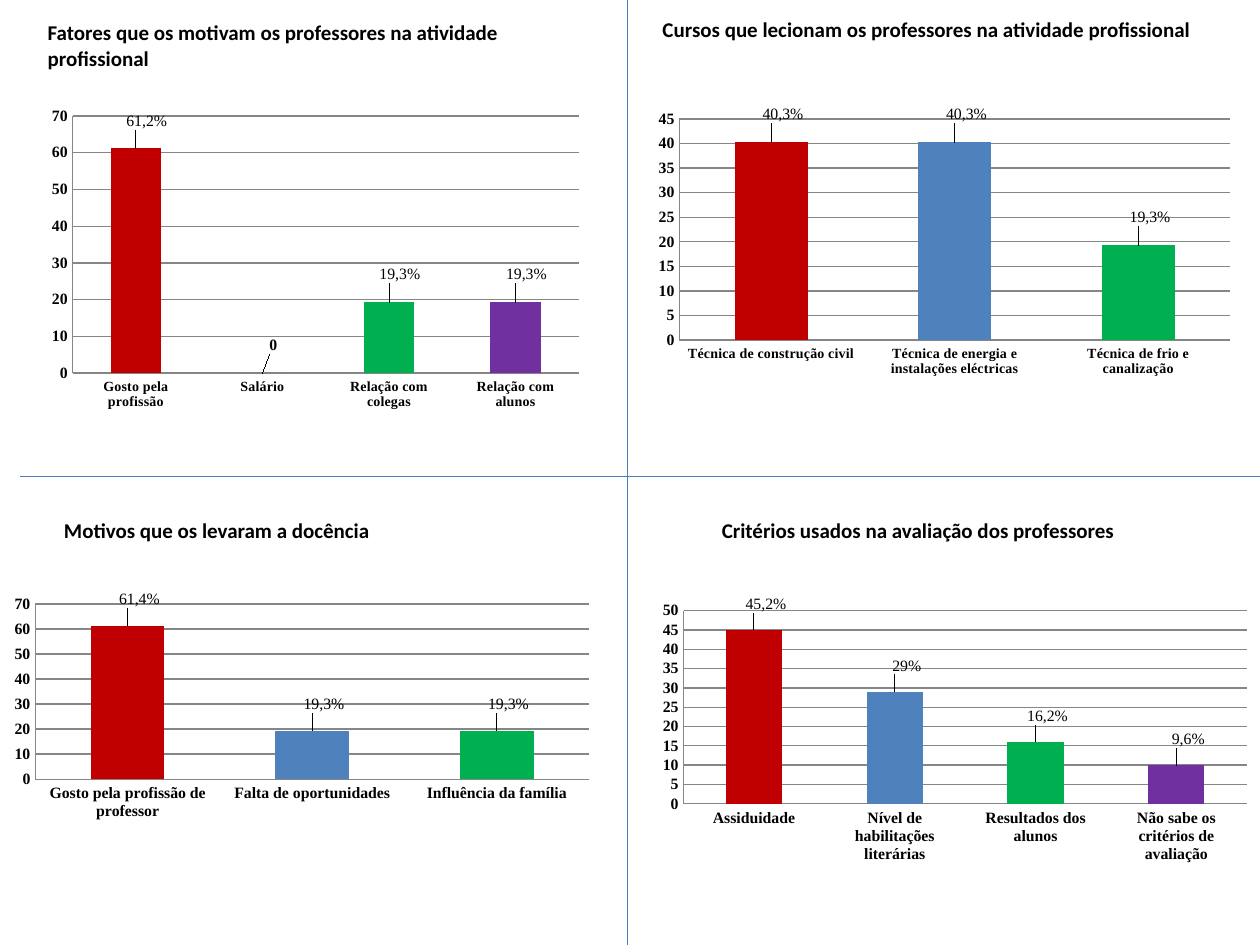
from dataclasses import dataclass

from lxml.etree import SubElement
from pptx import Presentation
from pptx.chart.data import CategoryChartData
from pptx.dml.color import RGBColor
from pptx.enum.chart import XL_CHART_TYPE, XL_LABEL_POSITION, XL_TICK_MARK
from pptx.enum.shapes import MSO_CONNECTOR
from pptx.enum.text import MSO_AUTO_SIZE
from pptx.oxml import parse_xml
from pptx.oxml.ns import nsdecls, qn
from pptx.util import Inches, Pt


@dataclass(frozen=True)
class Theme:
    text: RGBColor = RGBColor.from_string("000000")
    divider: RGBColor = RGBColor.from_string("4B7EBC")
    grid: RGBColor = RGBColor.from_string("868686")
    bars: tuple = tuple(
        RGBColor.from_string(code) for code in ("C00000", "4F81BD", "00B050", "7030A0")
    )
    title_font: str = "Calibri"
    chart_font: str = "Times New Roman"
    title_size: Pt = Pt(12)
    chart_size: Pt = Pt(9)
    small_size: Pt = Pt(8)
    line_width: Pt = Pt(0.75)


@dataclass(frozen=True)
class Panel:
    title: str
    title_box: tuple
    wraps: bool
    chart_box: tuple
    plot_area: tuple
    categories: tuple
    values: tuple
    labels: tuple
    category_size: Pt


THEME = Theme()
LABEL_SHIFT = (0.02, -0.04)

PANELS = (
    Panel(
        "Fatores que os motivam os professores na atividade profissional",
        (0.28, 0.11, 4.33, 0.5), True,
        (0.32, 0.63, 4.28, 2.65), (0.06, 0.11, 0.94, 0.77),
        ("Gosto pela profissão", "Salário", "Relação com colegas", "Relação com alunos"),
        (61.2, 0, 19.3, 19.3), ("61,2%", None, "19,3%", "19,3%"), THEME.small_size,
    ),
    Panel(
        "Cursos que lecionam os professores na atividade profissional",
        (5.16, 0.08, 5, 0.3), True,
        (5.16, 0.6, 4.65, 2.76), (0.05, 0.125, 0.94, 0.636),
        ("Técnica de construção civil", "Técnica de energia e instalações eléctricas",
         "Técnica de frio e canalização"),
        (40.3, 40.3, 19.3), ("40,3%", "40,3%", "19,3%"), THEME.small_size,
    ),
    Panel(
        "Motivos que os levaram a docência",
        (0.41, 4.06, 2.66, 0.3), False,
        (0, 4.38, 4.68, 2.44), (0.06, 0.17, 0.94, 0.57),
        ("Gosto pela profissão de professor", "Falta de oportunidades",
         "Influência da família"),
        (61.4, 19.3, 19.3), ("61,4%", "19,3%", "19,3%"), THEME.chart_size,
    ),
    Panel(
        "Critérios usados na avaliação dos professores",
        (5.63, 4.06, 3.35, 0.3), False,
        (5.14, 4.54, 4.76, 2.36), (0.06, 0.13, 0.94, 0.65),
        ("Assiduidade", "Nível de habilitações literárias", "Resultados dos alunos",
         "Não sabe os critérios de avaliação"),
        (45, 29, 16, 10), ("45,2%", "29%", "16,2%", "9,6%"), THEME.chart_size,
    ),
)


def style_font(font, name, size, bold):
    font.name = name
    font.size = size
    font.bold = bold
    font.color.rgb = THEME.text


def add_title(page, panel):
    box = page.shapes.add_textbox(*map(Inches, panel.title_box))
    frame = box.text_frame
    frame.word_wrap = panel.wraps
    frame.auto_size = MSO_AUTO_SIZE.SHAPE_TO_FIT_TEXT
    span = frame.paragraphs[0].add_run()
    span.text = panel.title
    style_font(span.font, THEME.title_font, THEME.title_size, True)


def set_layout(parent, position, settings):
    for old in parent.findall(qn("c:layout")):
        parent.remove(old)
    layout = parse_xml(f"<c:layout {nsdecls('c')}><c:manualLayout/></c:layout>")
    for tag, value in settings:
        SubElement(layout[0], qn(f"c:{tag}")).set("val", str(value))
    parent.insert(position, layout)


def style_axes(chart, category_size):
    for axis in (chart.category_axis, chart.value_axis):
        axis.major_tick_mark = XL_TICK_MARK.NONE
        axis.minor_tick_mark = XL_TICK_MARK.NONE
        axis.format.line.color.rgb = THEME.grid
        axis.format.line.width = THEME.line_width
    style_font(chart.category_axis.tick_labels.font, THEME.chart_font, category_size, True)
    chart.value_axis.has_major_gridlines = True
    grid_line = chart.value_axis.major_gridlines.format.line
    grid_line.color.rgb = THEME.grid
    grid_line.width = THEME.line_width


def add_label(series, index, text):
    label = series.points[index].data_label
    if text is not None:
        span = label.text_frame.paragraphs[0].add_run()
        span.text = text
        style_font(span.font, THEME.chart_font, THEME.chart_size, False)
    label.position = XL_LABEL_POSITION.OUTSIDE_END
    element = next(
        item for item in series.data_labels._element.findall(qn("c:dLbl"))
        if item.find(qn("c:idx")).get("val") == str(index)
    )
    set_layout(element, 1, zip("xy", LABEL_SHIFT))


def add_column_chart(page, panel):
    data = CategoryChartData()
    data.categories = panel.categories
    data.add_series("Series 1", panel.values)
    chart = page.shapes.add_chart(
        XL_CHART_TYPE.COLUMN_CLUSTERED, *map(Inches, panel.chart_box), data
    ).chart
    chart.has_legend = False
    chart.has_title = False
    style_font(chart.font, THEME.chart_font, THEME.chart_size, True)
    style_axes(chart, panel.category_size)

    plot = chart.plots[0]
    plot.gap_width = 150
    plot.vary_by_categories = False
    series = plot.series[0]
    series.invert_if_negative = False
    series.format.fill.solid()
    series.format.fill.fore_color.rgb = THEME.bars[1]
    series.data_labels.show_value = True
    for index, text in enumerate(panel.labels):
        fill = series.points[index].format.fill
        fill.solid()
        fill.fore_color.rgb = THEME.bars[index]
        add_label(series, index, text)

    settings = [("layoutTarget", "inner"), ("xMode", "edge"), ("yMode", "edge")]
    settings += zip("xywh", panel.plot_area)
    set_layout(chart._chartSpace.chart.plotArea, 0, settings)


def add_divider(page, start, end):
    line = page.shapes.add_connector(MSO_CONNECTOR.STRAIGHT, *map(Inches, start + end))
    line.line.color.rgb = THEME.divider
    line.line.width = THEME.line_width
    SubElement(line._element.spPr, qn("a:effectLst"))


def main():
    deck = Presentation()
    deck.slide_width = Inches(10)
    deck.slide_height = Inches(7.5)
    page = deck.slides.add_slide(deck.slide_layouts[6])
    for panel in PANELS:
        add_title(page, panel)
        add_column_chart(page, panel)
    add_divider(page, (4.98, 0), (4.98, 7.5))
    add_divider(page, (0.16, 3.78), (10.16, 3.78))
    deck.save("out.pptx")


if __name__ == "__main__":
    main()
